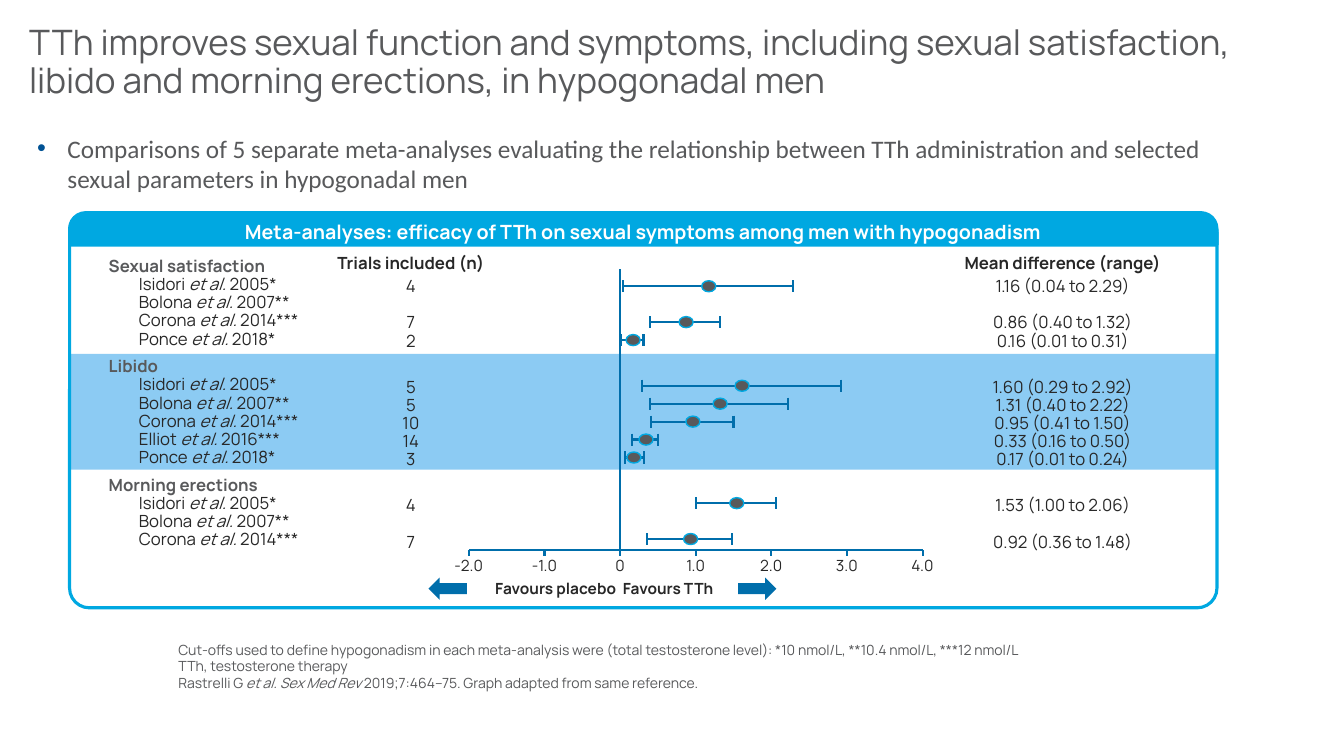
import pptx
import pptx.dml.color
import pptx.enum.shapes
import pptx.enum.text
import pptx.oxml
import pptx.oxml.ns
import pptx.util
from lxml import etree

Inches, Pt = pptx.util.Inches, pptx.util.Pt
RGBColor = pptx.dml.color.RGBColor
SHAPE = pptx.enum.shapes.MSO_SHAPE
ALIGN = pptx.enum.text.PP_ALIGN
ANCHOR = pptx.enum.text.MSO_ANCHOR
qn = pptx.oxml.ns.qn

GREY = RGBColor(0x58, 0x59, 0x5B)
INK = RGBColor(0x27, 0x27, 0x27)
WHITE = RGBColor(0xFF, 0xFF, 0xFF)
CYAN = RGBColor(0x00, 0xA8, 0xE1)
BAND = RGBColor(0x8C, 0xCB, 0xF3)
BLUE = RGBColor(0x00, 0x6E, 0xAB)
BULLET = RGBColor(0x00, 0x52, 0x94)

ROW, SECTION_GAP, UNIT = 0.178, 0.275, 0.75
BLANK_ROW, BLANK_GAP = 13, 6.9

# Each study: author, year and marks, trials, mean, low, high, drawn interval if different.
SECTIONS = [
    ("Sexual satisfaction", [
        ("Isidori", "2005*", 4, 1.16, 0.04, 2.29, None),
        ("Bolona", "2007**", None, None, None, None, None),
        ("Corona", "2014***", 7, 0.86, 0.40, 1.32, None),
        ("Ponce", "2018*", 2, 0.16, 0.01, 0.31, None)]),
    ("Libido", [
        ("Isidori", "2005*", 5, 1.60, 0.29, 2.92, None),
        ("Bolona", "2007**", 5, 1.31, 0.40, 2.22, None),
        ("Corona", "2014***", 10, 0.95, 0.41, 1.50, None),
        ("Elliot", "2016***", 14, 0.33, 0.16, 0.50, None),
        ("Ponce", "2018*", 3, 0.17, 0.01, 0.24, (0.07, 0.32))]),
    ("Morning erections", [
        ("Isidori", "2005*", 4, 1.53, 1.00, 2.06, None),
        ("Bolona", "2007**", None, None, None, None, None),
        ("Corona", "2014***", 7, 0.92, 0.36, 1.48, None)]),
]


def add_run(p, text, size, color, bold=False, italic=False, font="Manrope"):
    """Append a formatted run to a paragraph."""
    r = p.add_run()
    r.text = text
    r.font.name, r.font.size, r.font.color.rgb = font, Pt(size), color
    r.font.bold, r.font.italic = bold, italic


def add_box(s, x, y, w, h, anchor=ANCHOR.TOP):
    """Add an empty wrapping text box and return its text frame."""
    tf = s.shapes.add_textbox(Inches(x), Inches(y), Inches(w), Inches(h)).text_frame
    tf.word_wrap, tf.vertical_anchor = True, anchor
    return tf


def add_label(s, x, y, w, h, text, size, color=INK, bold=False,
              align=ALIGN.LEFT, anchor=ANCHOR.MIDDLE):
    """Add a one-paragraph label and return the paragraph."""
    p = add_box(s, x, y, w, h, anchor).paragraphs[0]
    p.alignment = align
    add_run(p, text, size, color, bold)
    return p


def add_shape(s, kind, x, y, w, h, fill=None, line=None, width=1):
    """Add a flat preset shape."""
    sp = s.shapes.add_shape(kind, Inches(x), Inches(y), Inches(w), Inches(h))
    sp.shadow.inherit = False
    if fill is None:
        sp.fill.background()
    else:
        sp.fill.solid()
        sp.fill.fore_color.rgb = fill
    if line is None:
        sp.line.fill.background()
    else:
        sp.line.color.rgb, sp.line.width = line, Pt(width)
    return sp


def add_line(s, x1, y1, x2, y2):
    """Add a flat blue straight line."""
    c = s.shapes.add_connector(pptx.enum.shapes.MSO_CONNECTOR.STRAIGHT,
                               Inches(x1), Inches(y1), Inches(x2), Inches(y2))
    c.line.color.rgb, c.line.width = BLUE, Pt(1.5)
    etree.SubElement(c._element.spPr, qn("a:effectLst"))


def add_bullet(s, x, y, w, h, text):
    """Add the bulleted introduction."""
    p = add_box(s, x, y, w, h).paragraphs[0]
    pPr = p._p.get_or_add_pPr()
    pPr.set("marL", str(Inches(0.3)))
    pPr.set("indent", str(-Inches(0.3)))
    clr = etree.SubElement(pPr, qn("a:buClr"))
    etree.SubElement(clr, qn("a:srgbClr")).set("val", str(BULLET))
    etree.SubElement(pPr, qn("a:buFont")).set("typeface", "Arial")
    etree.SubElement(pPr, qn("a:buChar")).set("char", "•")
    add_run(p, text, 18, GREY, font="Calibri")


def add_footnote(s, x, y, w, h):
    """Add the cut-offs, abbreviation and reference lines."""
    tf = add_box(s, x, y, w, h, ANCHOR.BOTTOM)
    add_run(tf.paragraphs[0], "Cut-offs used to define hypogonadism in each meta-analysis were "
            "(total testosterone level): *10 nmol/L, **10.4 nmol/L, ***12 nmol/L", 10, GREY)
    add_run(tf.add_paragraph(), "TTh, testosterone therapy", 10, GREY)
    p = tf.add_paragraph()
    add_run(p, "Rastrelli G ", 10, GREY)
    add_run(p, "et al. Sex Med Rev", 10, GREY, italic=True)
    add_run(p, " 2019;7:464–75. Graph adapted from same reference.", 10, GREY)


def next_row(tf, started, gap):
    """Return the next tight paragraph of a column, spaced after the first."""
    p = tf.add_paragraph() if started else tf.paragraphs[0]
    p.line_spacing = 0.9
    if started and gap:
        p.space_before = Pt(gap)
    return p


def add_studies(s, x, y, w, h):
    """Add the column of section headings and studies."""
    tf = add_box(s, x, y, w, h)
    for i, (heading, studies) in enumerate(SECTIONS):
        add_run(next_row(tf, i > 0, BLANK_GAP), heading, 12, GREY, True)
        for author, year, *_ in studies:
            p = next_row(tf, True, 0)
            p._p.get_or_add_pPr().set("marL", str(Inches(0.3)))
            add_run(p, author + " ", 12, INK)
            add_run(p, "et al. ", 12, INK, italic=True)
            add_run(p, year, 12, INK)


def add_values(s, x, y, w, h, describe):
    """Add a centred column with one value for each study that has data."""
    tf = add_box(s, x, y, w, h)
    started, gap = False, 0
    for _, studies in SECTIONS:
        for study in studies:
            if study[2] is None:
                gap += BLANK_ROW
                continue
            p = next_row(tf, started, gap)
            p.alignment = ALIGN.CENTER
            add_run(p, describe(study), 12, INK)
            started, gap = True, 0
        gap += BLANK_GAP + BLANK_ROW


def add_forest(s, x, y, h):
    """Add the forest plot, with its axis starting at x and ending h below y."""
    zero, base = x + 2 * UNIT, y + h
    add_line(s, x, base, x + 6 * UNIT, base)
    for value in range(-2, 5):
        tick = zero + value * UNIT
        add_line(s, tick, base, tick, base + 0.06)
        add_label(s, tick - 0.33, base, 0.66, 0.29, f"{value:.1f}" if value else "0",
                  11, align=ALIGN.CENTER)
    add_line(s, zero, y, zero, base)
    row = y + 0.17
    for _, studies in SECTIONS:
        for _, _, _, mean, low, high, drawn in studies:
            if mean is not None:
                left, right = (zero + v * UNIT for v in drawn or (low, high))
                for end in (left, right):
                    add_line(s, end, row - 0.06, end, row + 0.06)
                add_line(s, left, row, right, row)
                add_shape(s, SHAPE.OVAL, zero + mean * UNIT - 0.06, row - 0.055,
                          0.14, 0.11, GREY, CYAN)
            row += ROW
        row += SECTION_GAP
    add_label(s, zero - 0.07, base + 0.23, 1.47, 0.29, "Favours TTh", 11, bold=True)
    add_label(s, zero - 1.92, base + 0.23, 1.98, 0.29, "Favours placebo", 11, bold=True,
              align=ALIGN.RIGHT)
    add_shape(s, SHAPE.RIGHT_ARROW, zero + 1.17, base + 0.27, 0.38, 0.22, BLUE)
    arrow = add_shape(s, SHAPE.RIGHT_ARROW, zero - 1.9, base + 0.27, 0.38, 0.22, BLUE)
    arrow._element.spPr.find(qn("a:xfrm")).set("flipH", "1")


def add_panel(s, x, y, w, h):
    """Add the framed meta-analysis panel with its columns and plot."""
    add_shape(s, SHAPE.RECTANGLE, x, y + 1.4, w, 1.15, BAND)
    frame = add_shape(s, SHAPE.ROUNDED_RECTANGLE, x, y, w, h, None, CYAN, 2.25)
    frame.adjustments[0] = 0.05
    head = add_shape(s, SHAPE.ROUND_2_SAME_RECTANGLE, x, y, w, 0.32, CYAN, CYAN, 2.25)
    head.adjustments[0] = 0.5
    tf = head.text_frame
    tf.vertical_anchor = ANCHOR.MIDDLE
    tf.paragraphs[0].alignment = ALIGN.CENTER
    add_run(tf.paragraphs[0], "Meta-analyses: efficacy of TTh on sexual symptoms among men "
            "with hypogonadism", 14, WHITE, True)
    for dx, dw, text in ((2.24, 2.29, "Trials included (n)"),
                         (8.33, 3.04, "Mean difference (range)")):
        add_label(s, x + dx, y + 0.35, dw, 0.3, text, 12, bold=True, align=ALIGN.CENTER)
    add_studies(s, x + 0.29, y + 0.4, 2.22, 3.01)
    add_values(s, x + 3.15, y + 0.6, 0.47, 2.81, lambda study: str(study[2]))
    add_values(s, x + 8.76, y + 0.6, 2.18, 2.81,
               lambda study: "{:.2f} ({:.2f} to {:.2f})".format(*study[3:6]))
    add_forest(s, x + 3.96, y + 0.56, 2.79)


def main():
    """Build and save the slide."""
    prs = pptx.Presentation()
    prs.slide_width, prs.slide_height = Inches(13.33), Inches(7.5)
    s = prs.slides.add_slide(prs.slide_layouts[6])
    title = add_label(s, 0.19, 0.17, 12.42, 0.91, "TTh improves sexual function and symptoms, "
                      "including sexual satisfaction, libido and morning erections, in "
                      "hypogonadal men", 25, GREY)
    title.line_spacing = 0.9
    add_bullet(s, 0.27, 1.27, 12.01, 0.75, "Comparisons of 5 separate meta-analyses evaluating "
               "the relationship between TTh administration and selected sexual parameters in "
               "hypogonadal men")
    add_panel(s, 0.69, 2.11, 11.38, 3.92)
    add_footnote(s, 1.67, 6.3, 10, 0.61)
    prs.save("out.pptx")


if __name__ == "__main__":
    main()
